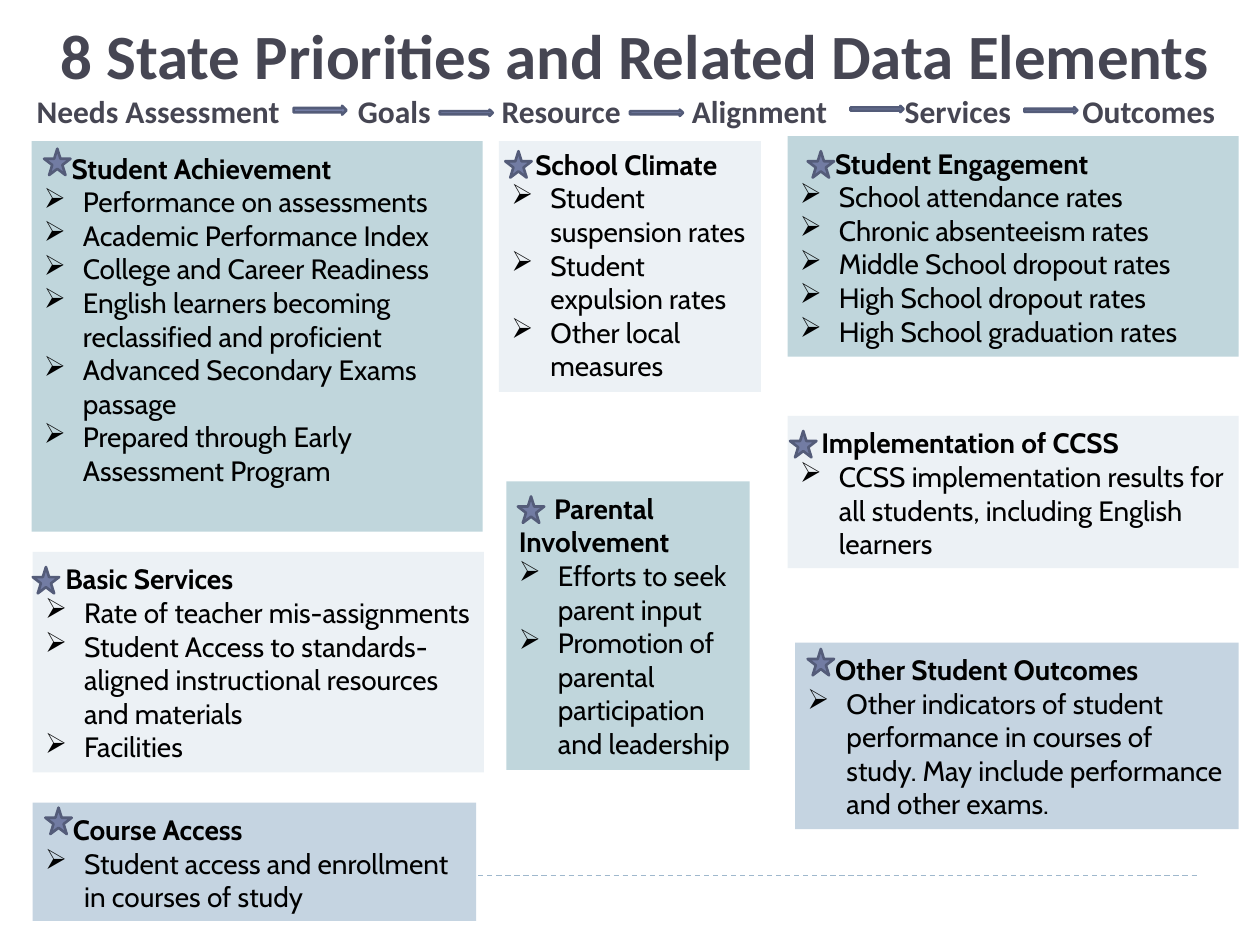
import pptx
import pptx.util
import pptx.dml.color
import pptx.enum.dml
import pptx.enum.shapes
import pptx.enum.text
import pptx.oxml.ns
from lxml import etree

Inches, Pt = pptx.util.Inches, pptx.util.Pt
RGBColor = pptx.dml.color.RGBColor
MSO_SHAPE = pptx.enum.shapes.MSO_SHAPE
PP_ALIGN = pptx.enum.text.PP_ALIGN
qn = pptx.oxml.ns.qn

BLACK = RGBColor(0x00, 0x00, 0x00)
SLATE = RGBColor(0x46, 0x46, 0x53)
TEAL = RGBColor(0xC0, 0xD6, 0xDC)
PALE = RGBColor(0xEC, 0xF1, 0xF5)
BLUE = RGBColor(0xC5, 0xD4, 0xE1)
RULE = RGBColor(0x9F, 0xB8, 0xCD)
ACCENT = RGBColor(0x72, 0x7C, 0xA3)
ACCENT_DARK = RGBColor(0x54, 0x5C, 0x79)

STAGES = [("Needs Assessment", 0), ("Goals", 2.55), ("Resource", 3.69),
          ("Alignment", 5.2), ("Services", 6.89), ("Outcomes", 8.3)]
ARROWS = [(2.04, 0.11, 0.07), (3.2, 0.14, 0.05), (4.71, 0.14, 0.05),
          (6.46, 0.11, 0.05), (7.84, 0.12, 0.05)]

PRIORITIES = [
    ((0.25, 1.12, 3.58, 3.1), TEAL, (0.1, 0.06), 0.22, "Student Achievement",
     ["Performance on assessments", "Academic Performance Index",
      "College and Career Readiness",
      "English learners becoming reclassified and proficient",
      "Advanced Secondary Exams passage",
      "Prepared through Early Assessment Program"]),
    ((0.26, 4.38, 3.58, 1.75), PALE, (0, 0.12), 0.16, "Basic Services",
     ["Rate of teacher mis-assignments",
      "Student Access to standards-aligned instructional resources and materials",
      "Facilities"]),
    ((0.26, 6.37, 3.52, 0.94), BLUE, (0.1, 0.04), 0.22, "Course Access",
     ["Student access and enrollment in courses of study"]),
    ((3.96, 1.12, 2.08, 1.99), PALE, (0.05, 0.08), 0.19, "School Climate",
     ["Student suspension rates", "Student expulsion rates",
      "Other local measures"]),
    ((4.02, 3.82, 1.93, 2.29), TEAL, (0.09, 0.12), 0.28, "Parental Involvement",
     ["Efforts to seek parent input",
      "Promotion of parental participation and leadership"]),
    ((6.25, 1.08, 3.58, 1.75), TEAL, (0.16, 0.12), 0.28, "Student Engagement",
     ["School attendance rates", "Chronic absenteeism rates",
      "Middle School dropout rates", "High School dropout rates",
      "High School graduation rates"]),
    ((6.25, 3.3, 3.58, 1.21), PALE, (0.02, 0.12), 0.17, "Implementation of CCSS",
     ["CCSS implementation results for all students, including English learners"]),
    ((6.31, 5.1, 3.52, 1.48), BLUE, (0.1, 0.05), 0.22, "Other Student Outcomes",
     ["Other indicators of student performance in courses of study. "
      "May include performance and other exams."]),
]


def add_run(p, text, size, font, color, bold=False):
    """Append one formatted run to a paragraph."""
    r = p.add_run()
    r.text = text
    r.font.size, r.font.name, r.font.bold = Pt(size), font, bold
    r.font.color.rgb = color


def add_solid(s, kind, box, fill, line=None):
    """Add a preset shape with a flat fill and an optional outline."""
    sp = s.shapes.add_shape(kind, *map(Inches, box))
    sp.shadow.inherit = False
    sp.fill.solid()
    sp.fill.fore_color.rgb = fill
    if line is None:
        sp.line.fill.background()
    else:
        sp.line.color.rgb = line
        sp.line.width = Pt(1.5)
    return sp


def add_heading_box(s, box):
    """Add a text box without insets and return its first paragraph."""
    tf = s.shapes.add_textbox(*map(Inches, box)).text_frame
    tf.word_wrap = True
    tf.margin_left = tf.margin_right = tf.margin_top = tf.margin_bottom = 0
    return tf.paragraphs[0]


def add_title(s, box):
    """Place the centred slide title."""
    p = add_heading_box(s, box)
    p.alignment = PP_ALIGN.CENTER
    add_run(p, "8 State Priorities and Related Data Elements", 36, "Calibri", SLATE, True)


def add_stages(s, box):
    """Place the row of planning stages on tab stops, with arrows between them."""
    left, top = box[:2]
    p = add_heading_box(s, box)
    tabs = etree.SubElement(p._p.get_or_add_pPr(), qn("a:tabLst"))
    for name, x in STAGES:
        if x:
            etree.SubElement(tabs, qn("a:tab"), pos=str(Inches(x)), algn="l")
        add_run(p, "\t" + name if x else name, 18, "Calibri", SLATE, True)
    for x, y, height in ARROWS:
        add_solid(s, MSO_SHAPE.RIGHT_ARROW, (left + x, top + y, 0.42, height),
                  ACCENT, ACCENT_DARK)


def add_priority(s, box, fill, star, indent, heading, items):
    """Place one priority panel with its star, heading and bulleted items."""
    left, top = box[:2]
    tf = add_solid(s, MSO_SHAPE.RECTANGLE, box, fill).text_frame
    tf.word_wrap = True
    tf.vertical_anchor = pptx.enum.text.MSO_ANCHOR.TOP
    tf.margin_top = Inches(0.05 if heading == "School Climate" else 0.08)
    p = tf.paragraphs[0]
    p.alignment = PP_ALIGN.LEFT
    p._p.get_or_add_pPr().set("indent", str(Inches(indent)))
    add_run(p, heading, 16, "Cabin", BLACK, True)
    for item in items:
        p = tf.add_paragraph()
        p.alignment = PP_ALIGN.LEFT
        pPr = p._p.get_or_add_pPr()
        pPr.set("marL", str(Inches(0.31)))
        pPr.set("indent", str(Inches(-0.31)))
        etree.SubElement(pPr, qn("a:buChar"), char="➢")
        add_run(p, item, 16, "Cabin", BLACK)
    add_solid(s, MSO_SHAPE.STAR_5_POINT, (left + star[0], top + star[1], 0.21, 0.21),
              ACCENT, ACCENT_DARK)


def add_rule(s, left, top, width):
    """Place the dashed footer rule."""
    line = s.shapes.add_connector(pptx.enum.shapes.MSO_CONNECTOR.STRAIGHT, Inches(left),
                                  Inches(top), Inches(left + width), Inches(top))
    line.line.color.rgb = RULE
    line.line.width = Pt(0.75)
    line.line.dash_style = pptx.enum.dml.MSO_LINE.DASH
    etree.SubElement(line._element.spPr, qn("a:effectLst"))


def main():
    """Build and save the slide."""
    prs = pptx.Presentation()
    prs.slide_width, prs.slide_height = Inches(10), Inches(7.5)
    s = prs.slides.add_slide(prs.slide_layouts[6])
    add_rule(s, 0.5, 6.95, 9)
    add_title(s, (0.25, 0.13, 9.58, 0.61))
    add_stages(s, (0.29, 0.73, 9.58, 0.31))
    for priority in PRIORITIES:
        add_priority(s, *priority)
    prs.save("out.pptx")


if __name__ == "__main__":
    main()
